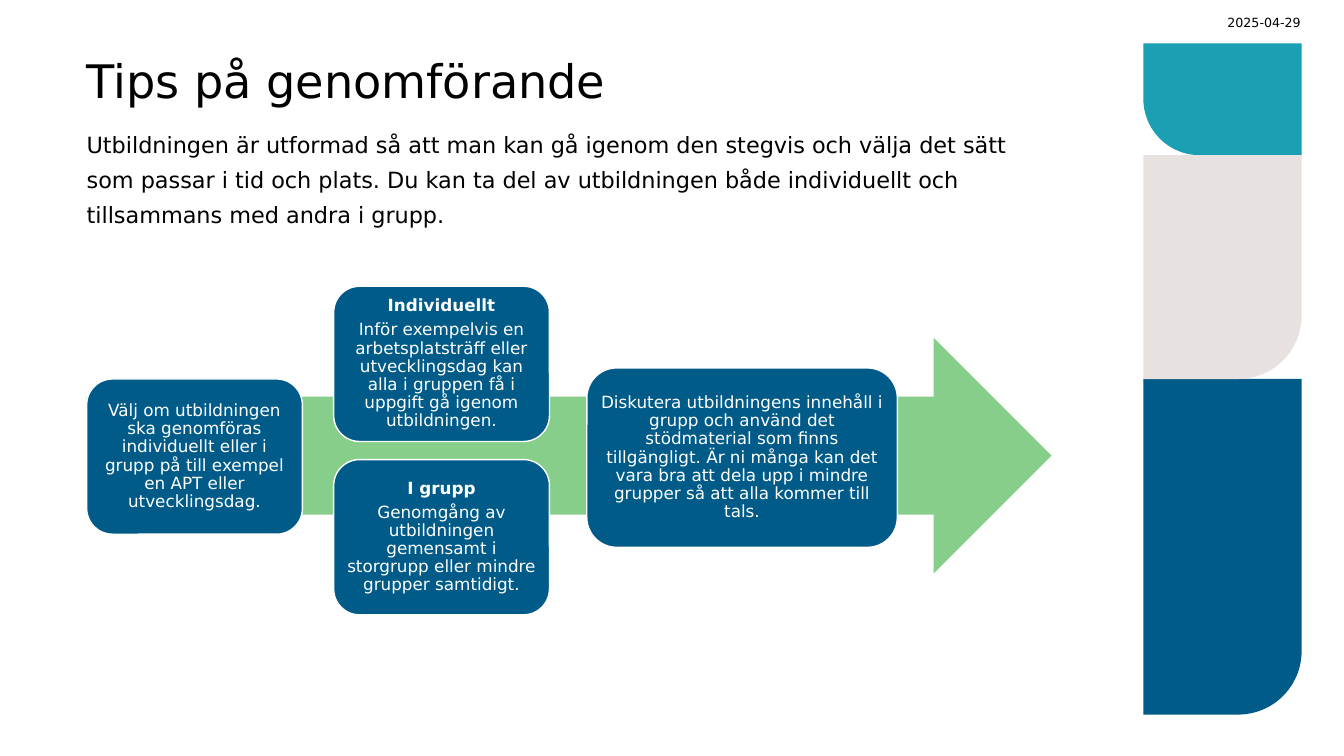
from math import cos, pi, sin

from pptx import Presentation
from pptx.dml.color import RGBColor
from pptx.enum.shapes import MSO_SHAPE as Preset
from pptx.enum.text import MSO_ANCHOR as Anchor, MSO_AUTO_SIZE as AutoSize, PP_ALIGN as Align
from pptx.util import Inches, Pt

TEAL = RGBColor(0x1A, 0x9F, 0xB3)
BLUE = RGBColor(0x00, 0x5B, 0x89)
SAND = RGBColor(0xE7, 0xE1, 0xDF)
GREEN = RGBColor(0x88, 0xCE, 0x8B)
WHITE = RGBColor(0xFF, 0xFF, 0xFF)
BLACK = RGBColor(0x00, 0x00, 0x00)

PANEL_LEFT, PANEL_RIGHT = 11.34, 12.91
ARC_STEPS = 24
STEP_WIDTH, STEP_HEIGHT = 2.14, 1.54


class SlideBuilder:
    font_name = "DejaVu Sans"

    def __init__(self, presentation):
        self.slide = presentation.slides.add_slide(presentation.slide_layouts[5])

    def fill_text(self, shape, lines, size, color=BLACK, anchor=Anchor.TOP, inset=0,
                  bold_first=False, **formats):
        frame = shape.text_frame
        margins = {f"margin_{side}": Inches(inset) for side in ("left", "top", "right", "bottom")}
        settings = {"word_wrap": True, "auto_size": AutoSize.NONE, "vertical_anchor": anchor, **margins}
        for name, value in settings.items():
            setattr(frame, name, value)
        for index, line in enumerate(lines):
            paragraph = frame.add_paragraph() if index else frame.paragraphs[0]
            for name, value in formats.items():
                setattr(paragraph, name, value)
            run = paragraph.add_run()
            run.text = line
            bold = bold_first and index == 0
            for name, value in {"name": self.font_name, "size": Pt(size), "bold": bold}.items():
                setattr(run.font, name, value)
            run.font.color.rgb = color

    def paint(self, shape, fill, line=None):
        shape.shadow.inherit = False
        shape.fill.solid()
        shape.fill.fore_color.rgb = fill
        if line is None:
            shape.line.fill.background()
        else:
            shape.line.color.rgb = line
            shape.line.width = Pt(1)

    def title(self, box, text):
        shape = self.slide.shapes.title
        for name, value in zip(("left", "top", "width", "height"), box):
            setattr(shape, name, Inches(value))
        self.fill_text(shape, [text], 33, anchor=Anchor.BOTTOM, alignment=Align.LEFT, line_spacing=1.1)

    def text(self, box, text, size, **formats):
        shape = self.slide.shapes.add_textbox(*map(Inches, box))
        self.fill_text(shape, [text], size, **formats)

    def arrow(self, box, fill):
        shape = self.slide.shapes.add_shape(Preset.RIGHT_ARROW, *map(Inches, box))
        self.paint(shape, fill)

    def step(self, box, lines):
        shape = self.slide.shapes.add_shape(Preset.ROUNDED_RECTANGLE, *map(Inches, box))
        self.paint(shape, BLUE, WHITE)
        self.fill_text(shape, lines, 12, WHITE, Anchor.MIDDLE, 0.05, len(lines) > 1,
                       alignment=Align.CENTER, line_spacing=0.9, space_after=Pt(4.2))

    def panel(self, top, bottom, radius, fill, round_left=False):
        angles = [pi / 2 * step / ARC_STEPS for step in range(ARC_STEPS + 1)]
        arc = [(PANEL_RIGHT - radius * (1 - cos(angle)), bottom - radius * (1 - sin(angle)))
               for angle in angles]
        points = [(PANEL_LEFT, top), (PANEL_RIGHT, top), *arc, (PANEL_LEFT, bottom)]
        if round_left:
            points = [(PANEL_LEFT + PANEL_RIGHT - x, y) for x, y in points]
        outline = [(Inches(x), Inches(y)) for x, y in points]
        builder = self.slide.shapes.build_freeform(*outline[0])
        builder.add_line_segments(outline[1:], close=True)
        self.paint(builder.convert_to_shape(), fill)


def main():
    presentation = Presentation()
    presentation.slide_width = Inches(13.33)
    presentation.slide_height = Inches(7.5)
    builder = SlideBuilder(presentation)

    builder.panel(0.43, 1.54, 0.56, TEAL, round_left=True)
    builder.panel(3.76, 7.09, 0.63, BLUE)
    builder.panel(1.54, 3.76, 0.63, SAND)

    builder.text((11.92, 0.15, 0.98, 0.15), "2025-04-29", 9, anchor=Anchor.MIDDLE,
                 alignment=Align.RIGHT, space_after=Pt(6))
    builder.title((0.86, 0.45, 7.15, 0.62), "Tips på genomförande")
    builder.text(
        (0.86, 1.22, 9.46, 1.22),
        "Utbildningen är utformad så att man kan gå igenom den stegvis och välja det sätt "
        "som passar i tid och plats. Du kan ta del av utbildningen både individuellt och "
        "tillsammans med andra i grupp.",
        16, line_spacing=1.3, space_before=Pt(10))

    builder.arrow((0.86, 3.35, 9.57, 2.34), GREEN)
    steps = [
        ((0.86, 3.76, STEP_WIDTH, STEP_HEIGHT),
         ["Välj om utbildningen ska genomföras individuellt eller i grupp på till exempel "
          "en APT eller utvecklingsdag."]),
        ((3.31, 4.56, STEP_WIDTH, STEP_HEIGHT),
         ["I grupp",
          "Genomgång av utbildningen gemensamt i storgrupp eller mindre grupper samtidigt."]),
        ((3.31, 2.84, STEP_WIDTH, STEP_HEIGHT),
         ["Individuellt",
          "Inför exempelvis en arbetsplatsträff eller utvecklingsdag kan alla i gruppen få i "
          "uppgift gå igenom utbildningen."]),
        ((5.82, 3.65, 3.08, 1.78),
         ["Diskutera utbildningens innehåll i grupp och använd det stödmaterial som finns "
          "tillgängligt. Är ni många kan det vara bra att dela upp i mindre grupper så att "
          "alla kommer till tals."]),
    ]
    for box, lines in steps:
        builder.step(box, lines)

    presentation.save("out.pptx")


if __name__ == "__main__":
    main()
